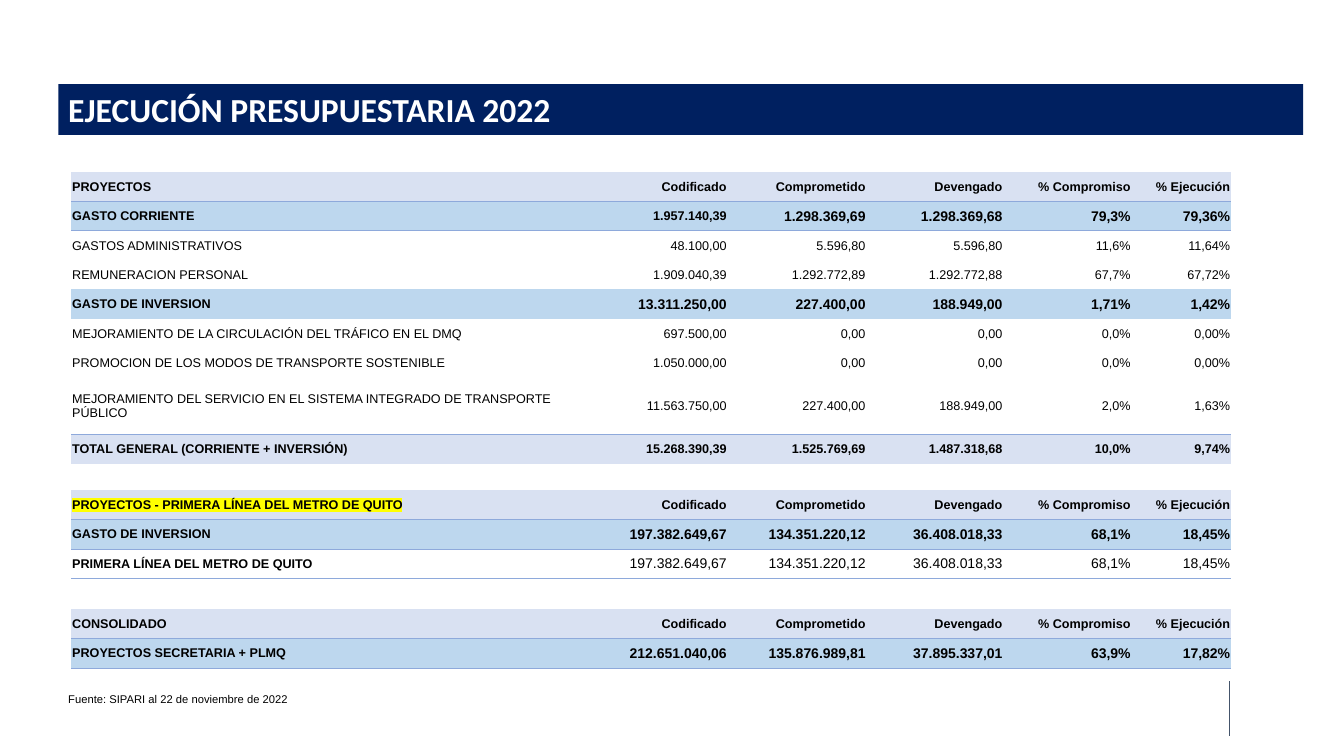
from collections import namedtuple

from lxml import etree
from pptx import Presentation
from pptx import util as u
from pptx.dml.color import RGBColor
from pptx.enum import shapes, text
from pptx.oxml import ns

NAVY, WHITE, BLACK = "002060", "FFFFFF", "000000"
LAVENDER, SKY, RULE = "D9E1F2", "BDD7EE", "8EA9DB"
YELLOW, SLATE = "FFFF00", "44546A"
NO_STYLE = "{2D5ABB26-0587-4C30-8999-92F81FD0307C}"

COLUMN_WIDTHS = (13.28, 3.25, 3.5, 3.45, 3.23, 2.51)
ROW_HEIGHT = 0.74
AMOUNT_HEADINGS = ["Codificado", "Comprometido", "Devengado", "% Compromiso", "% Ejecución"]

# sizes: label, first amount, other amounts
RowStyle = namedtuple("RowStyle", "fill label_bold amount_bold sizes")
HEADING = RowStyle(LAVENDER, True, True, (9, 9, 9))
CURRENT = RowStyle(SKY, True, True, (9, 9, 10))
GROUP = RowStyle(SKY, True, True, (9, 10, 10))
DETAIL = RowStyle(None, False, False, (9, 9, 9))
METRO = RowStyle(None, True, False, (9, 10, 10))

SECRETARIAT = [
    (CURRENT, "GASTO CORRIENTE", "1.957.140,39 1.298.369,69 1.298.369,68 79,3% 79,36%"),
    (DETAIL, "GASTOS ADMINISTRATIVOS", "48.100,00 5.596,80 5.596,80 11,6% 11,64%"),
    (DETAIL, "REMUNERACION PERSONAL", "1.909.040,39 1.292.772,89 1.292.772,88 67,7% 67,72%"),
    (GROUP, "GASTO DE INVERSION", "13.311.250,00 227.400,00 188.949,00 1,71% 1,42%"),
    (DETAIL, "MEJORAMIENTO DE LA CIRCULACIÓN DEL TRÁFICO EN EL DMQ",
     "697.500,00 0,00 0,00 0,0% 0,00%"),
    (DETAIL, "PROMOCION DE LOS MODOS DE TRANSPORTE SOSTENIBLE",
     "1.050.000,00 0,00 0,00 0,0% 0,00%"),
    (DETAIL, "MEJORAMIENTO DEL SERVICIO EN EL SISTEMA INTEGRADO DE TRANSPORTE PÚBLICO",
     "11.563.750,00 227.400,00 188.949,00 2,0% 1,63%"),
    (HEADING, "TOTAL GENERAL (CORRIENTE + INVERSIÓN)",
     "15.268.390,39 1.525.769,69 1.487.318,68 10,0% 9,74%"),
]
METRO_LINE = [
    (GROUP, "GASTO DE INVERSION", "197.382.649,67 134.351.220,12 36.408.018,33 68,1% 18,45%"),
    (METRO, "PRIMERA LÍNEA DEL METRO DE QUITO",
     "197.382.649,67 134.351.220,12 36.408.018,33 68,1% 18,45%"),
]
CONSOLIDATED = [
    (GROUP, "PROYECTOS SECRETARIA + PLMQ",
     "212.651.040,06 135.876.989,81 37.895.337,01 63,9% 17,82%"),
]


def rgb(value):
    return RGBColor.from_string(value)


def format_run(run, size, color, bold=False, font="Arial"):
    run.font.size = u.Pt(size)
    run.font.name = font
    run.font.bold = bold
    run.font.color.rgb = rgb(color)


def highlight(run, color):
    mark = etree.Element(ns.qn("a:highlight"))
    etree.SubElement(mark, ns.qn("a:srgbClr"), val=color)
    run.font._element.find(ns.qn("a:solidFill")).addnext(mark)


def add_borders(cell, ruled_edges):
    """Draw the ruled edges of a cell ("T", "B") and clear the others."""
    properties = cell._tc.get_or_add_tcPr()
    for edge in "LRTB":
        line = etree.SubElement(properties, ns.qn("a:ln" + edge))
        if edge in ruled_edges:
            line.set("w", str(u.Pt(0.5)))
            fill = etree.SubElement(line, ns.qn("a:solidFill"))
            etree.SubElement(fill, ns.qn("a:srgbClr"), val=RULE)
        else:
            etree.SubElement(line, ns.qn("a:noFill"))


def fill_cell(cell, content, column, style, ruled_edges):
    add_borders(cell, ruled_edges)
    if style.fill:
        cell.fill.solid()
        cell.fill.fore_color.rgb = rgb(style.fill)
    else:
        cell.fill.background()
    cell.margin_left = cell.margin_right = cell.margin_top = u.Cm(0.02)
    cell.margin_bottom = 0
    cell.vertical_anchor = text.MSO_ANCHOR.MIDDLE
    cell.text_frame.text = content
    paragraph = cell.text_frame.paragraphs[0]
    paragraph.alignment = text.PP_ALIGN.RIGHT if column else text.PP_ALIGN.LEFT
    bold = style.amount_bold if column else style.label_bold
    format_run(paragraph.runs[0], style.sizes[min(column, 2)], BLACK, bold)


def add_budget(slide, left, top, heading, entries, ruled_after, tall_rows=None):
    """Add a budget table with a rule below each row numbered in ruled_after."""
    heights = [ROW_HEIGHT] * (len(entries) + 1)
    for row, height in (tall_rows or {}).items():
        heights[row] = height
    budget = slide.shapes.add_table(
        len(heights), len(COLUMN_WIDTHS), u.Cm(left), u.Cm(top),
        u.Cm(sum(COLUMN_WIDTHS)), u.Cm(sum(heights))).table
    budget._tbl.tblPr.find(ns.qn("a:tableStyleId")).text = NO_STYLE
    budget.first_row = budget.horz_banding = False
    for column, width in zip(budget.columns, COLUMN_WIDTHS):
        column.width = u.Cm(width)
    for row, height in zip(budget.rows, heights):
        row.height = u.Cm(height)

    lines = [(HEADING, [heading] + AMOUNT_HEADINGS)]
    lines += [(style, [label] + amounts.split()) for style, label, amounts in entries]
    for row, (style, contents) in enumerate(lines):
        edges = ("T" if row - 1 in ruled_after else "") + ("B" if row in ruled_after else "")
        for column, content in enumerate(contents):
            fill_cell(budget.cell(row, column), content, column, style, edges)
    return budget


def add_title_band(slide, left, top, width, height):
    band = slide.shapes.add_shape(shapes.MSO_SHAPE.RECTANGLE, u.Cm(left), u.Cm(top),
                                  u.Cm(width), u.Cm(height))
    band.shadow.inherit = False
    band.fill.solid()
    band.fill.fore_color.rgb = rgb(NAVY)
    band.line.fill.background()
    band.text_frame.text = "EJECUCIÓN PRESUPUESTARIA 2022"
    band.text_frame.vertical_anchor = text.MSO_ANCHOR.TOP
    title = band.text_frame.paragraphs[0]
    title.alignment = text.PP_ALIGN.LEFT
    format_run(title.runs[0], 24, WHITE, True, "Calibri")


def add_footer(slide, left, top, width, height):
    source = slide.shapes.add_textbox(u.Cm(left), u.Cm(top + 0.18), u.Cm(width), u.Cm(height))
    source.text_frame.word_wrap = True
    source.text_frame.text = "Fuente: SIPARI al 22 de noviembre de 2022"
    format_run(source.text_frame.paragraphs[0].runs[0], 8, BLACK)

    rule_x = u.Cm(left + 29.51)
    margin_rule = slide.shapes.add_connector(
        shapes.MSO_CONNECTOR.STRAIGHT, rule_x, u.Cm(top + 1.39), rule_x, u.Cm(top))
    margin_rule.line.color.rgb = rgb(SLATE)
    margin_rule.line.width = u.Pt(0.75)
    etree.SubElement(margin_rule._element.spPr, ns.qn("a:effectLst"))


def main():
    deck = Presentation()
    deck.slide_width, deck.slide_height = u.Cm(33.87), u.Cm(19.05)
    slide = deck.slides.add_slide(deck.slide_layouts[6])
    add_title_band(slide, 1.47, 2.12, 31.37, 1.28)
    add_budget(slide, 1.8, 4.33, "PROYECTOS", SECRETARIAT, {0, 1, 7}, {7: 1.43})
    metro = add_budget(slide, 1.8, 12.35, "PROYECTOS - PRIMERA LÍNEA DEL METRO DE QUITO",
                       METRO_LINE, {0, 1, 2})
    highlight(metro.cell(0, 0).text_frame.paragraphs[0].runs[0], YELLOW)
    add_budget(slide, 1.8, 15.35, "CONSOLIDADO", CONSOLIDATED, {0, 1})
    add_footer(slide, 1.47, 17.15, 16.36, 0.6)
    deck.save("out.pptx")


if __name__ == "__main__":
    main()
